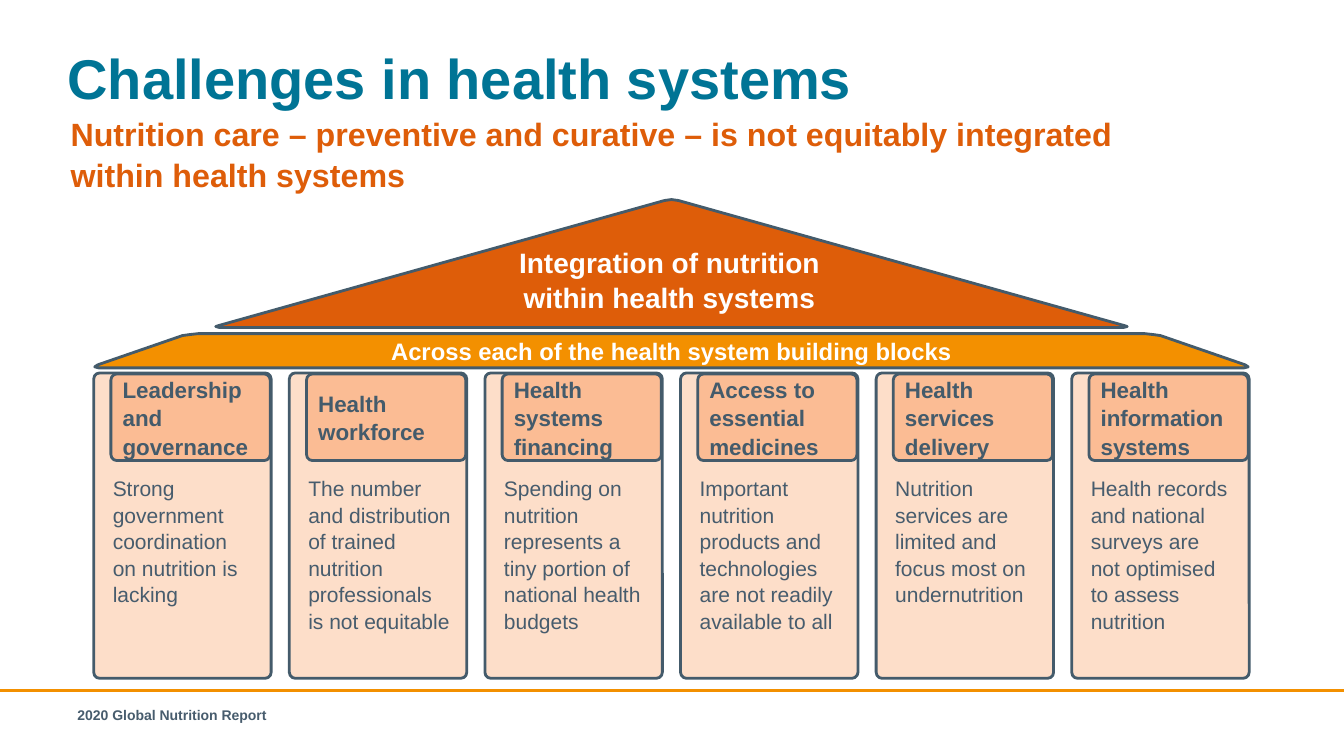
from lxml import etree
from pptx import Presentation
from pptx.dml.color import RGBColor as RGB
from pptx.enum.shapes import MSO_CONNECTOR as CONNECTOR, MSO_SHAPE as SHAPE
from pptx.enum.text import MSO_ANCHOR as ANCHOR, PP_ALIGN as ALIGN
from pptx.oxml.ns import qn
from pptx.util import Pt

PX = 9144
SLIDE_W, SLIDE_H = 1333, 750
COLOURS = {
    "teal": "007495", "rust": "DE5D09", "amber": "F39000", "white": "FFFFFF",
    "slate": "445B6B", "ink": "475C6D", "peach": "FDDEC9", "salmon": "FBBC94",
}
FORMATS = {
    "title": {"size": 40, "bold": True, "colour": "teal"},
    "subtitle": {"size": 23, "bold": True, "colour": "rust"},
    "roof": {"size": 20, "bold": True, "colour": "white"},
    "beam": {"size": 17, "bold": True, "colour": "white"},
    "block": {"size": 16, "bold": True, "colour": "slate"},
    "challenge": {"size": 15, "bold": False, "colour": "ink"},
    "footer": {"size": 10, "bold": True, "colour": "ink"},
}
PILLARS = [
    ("Leadership\nand governance",
     "Strong government coordination on nutrition is lacking", 158),
    ("Health\nworkforce",
     "The number and distribution of trained nutrition professionals\nis not equitable", 167),
    ("Health\nsystems\nfinancing",
     "Spending on nutrition represents a tiny portion of national health budgets", 158),
    ("Access to\nessential\nmedicines",
     "Important nutrition products and technologies are not readily available to all", 158),
    ("Health services\ndelivery",
     "Nutrition services are limited and focus most on undernutrition", 158),
    ("Health\ninformation\nsystems",
     "Health records and national surveys are not optimised to assess nutrition", 159),
]
PILLAR_STEP = 194
ROOF = [(659, 199), (666, 198), (673, 199), (1115, 323), (1118, 324),
        (1114, 325), (218, 325), (214, 324), (217, 323)]
BEAM = [(97, 362), (94, 364), (98, 365), (1234, 365), (1238, 364), (1235, 362),
        (1151, 333), (1144, 332), (1135, 331), (197, 331), (188, 332), (181, 333)]


class SlideBuilder:
    font = "Arial"
    line_width = Pt(2)
    line_spacing = 1.05

    def __init__(self, presentation):
        self.slide = presentation.slides.add_slide(presentation.slide_layouts[6])
        self.shapes = self.slide.shapes

    def colour(self, name):
        return RGB.from_string(COLOURS[name])

    def fill_text(self, frame, words, style, align=ALIGN.LEFT, anchor=ANCHOR.TOP):
        frame.word_wrap = True
        frame.vertical_anchor = anchor
        paragraph = frame.paragraphs[0]
        paragraph.text = words
        paragraph.alignment = align
        paragraph.line_spacing = self.line_spacing
        look = FORMATS[style]
        values = {"name": self.font, "size": Pt(look["size"]), "bold": look["bold"]}
        for run in paragraph.runs:
            for attribute, value in values.items():
                setattr(run.font, attribute, value)
            run.font.color.rgb = self.colour(look["colour"])

    def text(self, box, words, style, align=ALIGN.LEFT, inset=True):
        frame = self.shapes.add_textbox(*(n * PX for n in box)).text_frame
        if not inset:
            for side in ("left", "top", "right", "bottom"):
                setattr(frame, f"margin_{side}", 0)
        self.fill_text(frame, words, style, align)

    def paint(self, shape, fill):
        shape.shadow.inherit = False
        shape.fill.solid()
        shape.fill.fore_color.rgb = self.colour(fill)
        shape.line.color.rgb = self.colour("slate")
        shape.line.width = self.line_width
        return shape

    def rounded(self, box, radius, fill):
        shape = self.shapes.add_shape(SHAPE.ROUNDED_RECTANGLE, *(n * PX for n in box))
        shape.adjustments[0] = radius / min(box[2:])
        return self.paint(shape, fill)

    def outline(self, points, fill):
        start, *rest = points
        builder = self.shapes.build_freeform(*start, scale=PX)
        builder.add_line_segments(rest, close=True)
        return self.paint(builder.convert_to_shape(), fill)

    def rule(self, y, colour):
        line = self.shapes.add_connector(CONNECTOR.STRAIGHT, 0, y * PX, SLIDE_W * PX, y * PX)
        line.line.color.rgb = self.colour(colour)
        line.line.width = self.line_width
        etree.SubElement(line._element.spPr, qn("a:effectLst"))


def main():
    presentation = Presentation()
    presentation.slide_width = SLIDE_W * PX
    presentation.slide_height = SLIDE_H * PX
    page = SlideBuilder(presentation)

    page.rule(685, "amber")
    page.text((67, 40, 1200, 65), "Challenges in health systems", "title", inset=False)
    page.text((70, 112, 1200, 43),
              "Nutrition care – preventive and curative – is not equitably integrated\n"
              "within health systems", "subtitle", inset=False)

    for index, (block, challenge, width) in enumerate(PILLARS):
        shift = index * PILLAR_STEP
        page.rounded((93 + shift, 370, 176, 303), 6, "peach")
        heading = page.rounded((110 + shift, 371, 158, 86), 6, "salmon")
        page.fill_text(heading.text_frame, block, "block", anchor=ANCHOR.MIDDLE)
        page.text((102 + shift, 466, width, 162), challenge, "challenge")

    beam = page.outline(BEAM, "amber")
    page.fill_text(beam.text_frame, "Across each of the health system building blocks",
                   "beam", ALIGN.CENTER, ANCHOR.MIDDLE)
    page.outline(ROOF, "rust")
    page.text((488, 237, 352, 77), "Integration of nutrition within health systems",
              "roof", ALIGN.CENTER)
    page.text((67, 695, 960, 40), "2020 Global Nutrition Report", "footer")

    presentation.save("out.pptx")


if __name__ == "__main__":
    main()
